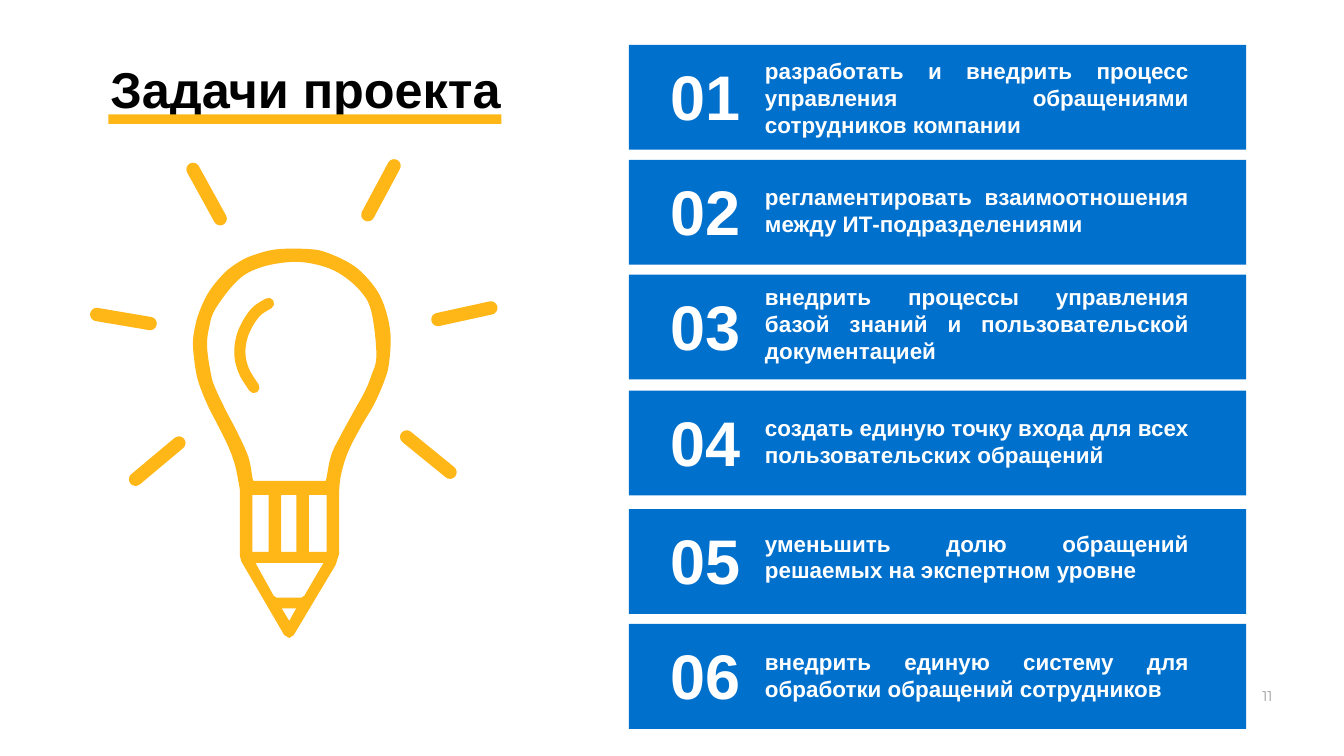
from dataclasses import dataclass

from lxml import etree
from pptx import Presentation
from pptx import util as u
from pptx.dml.color import RGBColor
from pptx.enum import shapes, text
from pptx.oxml.ns import qn

COLUMNS, ROWS = 26.67, 15  # grid of square cells
CELL = u.Inches(1)


@dataclass(frozen=True)
class Theme:
    font: str = "Arial"
    number_font: str = "Montserrat"
    accent: RGBColor = RGBColor(0xFF, 0xB7, 0x18)
    card: RGBColor = RGBColor(0x00, 0x70, 0xCD)
    dark: RGBColor = RGBColor(0, 0, 0)
    light: RGBColor = RGBColor(0xFF, 0xFF, 0xFF)
    muted: RGBColor = RGBColor(0x9B, 0x9A, 0x9C)
    title_size: int = 72
    numeral_size: int = 90
    task_size: int = 32
    page_size: int = 20
    ray_width: int = 19
    glint_width: int = 16


THEME = Theme()

CARD_LEFT, CARD_WIDTH, CARD_HEIGHT = 12.48, 12.25, 2.08
# Card top, offset of the task text inside the card, task
TASKS = [
    (0.89, 0.15, "разработать и внедрить процесс управления обращениями сотрудников компании"),
    (3.17, 0.37, "регламентировать взаимоотношения между ИТ-подразделениями"),
    (5.45, 0.07, "внедрить процессы управления базой знаний и пользовательской документацией"),
    (7.75, 0.36, "создать единую точку входа для всех пользовательских обращений"),
    (10.1, 0.31, "уменьшить долю обращений решаемых на экспертном уровне"),
    (12.38, 0.38, "внедрить единую систему для обработки обращений сотрудников"),
]

GLASS_OUTSIDE = [
    (4.76, 9.71), (4.67, 9.25), (4.54, 8.88), (4.34, 8.47), (4.14, 8.08), (3.98, 7.7),
    (3.89, 7.38), (3.83, 6.85), (3.87, 6.49), (3.97, 6.15), (4.16, 5.77), (4.46, 5.41),
    (4.74, 5.2), (5.01, 5.07), (5.47, 4.95), (6.08, 4.94), (6.48, 5.01), (7.03, 5.28),
    (7.43, 5.69), (7.64, 6.11), (7.75, 6.64), (7.72, 7.21), (7.63, 7.55), (7.43, 8.01),
    (7.19, 8.42), (6.98, 8.81), (6.85, 9.12), (6.76, 9.46), (6.73, 9.74),
]
PENCIL_OUTSIDE = [
    (6.73, 10.99), (6.66, 11.21), (5.83, 12.6), (5.74, 12.66), (5.64, 12.6),
    (4.79, 11.14), (4.76, 11.03),
]
GLASS_INSIDE = [
    (5.03, 9.54), (5.01, 9.48), (4.93, 9.07), (4.71, 8.58), (4.49, 8.16), (4.28, 7.72),
    (4.19, 7.44), (4.11, 6.89), (4.15, 6.5), (4.28, 6.12), (4.72, 5.56), (5.16, 5.31),
    (5.75, 5.2), (6.24, 5.24), (6.71, 5.41), (7.14, 5.76), (7.37, 6.18), (7.47, 7.05),
    (7.37, 7.45), (7.24, 7.77), (7.04, 8.13), (6.74, 8.68), (6.57, 9.04), (6.48, 9.48),
    (6.46, 9.54),
]
SLOTS = [(5.01, 5.33), (5.58, 5.88), (6.13, 6.48)]  # left and right edges
SLOT_TOP, SLOT_BOTTOM = 9.82, 10.95
WOOD = [(5.07, 11.17), (6.42, 11.17), (6.04, 11.82), (5.98, 11.86), (5.49, 11.86), (5.43, 11.82)]
TIP = [(5.59, 12.07), (5.88, 12.07), (5.74, 12.32)]
GLINT = [(5.33, 6.02), (5.06, 6.21), (4.83, 6.6), (4.76, 7), (4.84, 7.36), (5.04, 7.69)]
RAYS = [
    (3.55, 8.79, 2.69, 9.51), (7.82, 3.29, 7.3, 4.26), (3.83, 3.36, 4.37, 4.34),
    (8.07, 8.67, 8.93, 9.37), (9.74, 6.11, 8.69, 6.34), (1.92, 6.24, 2.98, 6.42),
]


def grid(*lengths):
    return [round(length * CELL) for length in lengths]


def smooth(points, steps=6):
    """Return points along a Catmull-Rom curve through the given points."""
    padded = [points[0], *points, points[-1]]
    curve = []
    for a, b, c, d in zip(padded, padded[1:], padded[2:], padded[3:]):
        for step in range(steps):
            t = step / steps
            curve.append(tuple(
                q + t / 2 * (r - p + t * (2 * p - 5 * q + 4 * r - s + t * (3 * (q - r) + s - p)))
                for p, q, r, s in zip(a, b, c, d)))
    return curve + [points[-1]]


def fill_plain(shape, color):
    shape.shadow.inherit = False
    shape.fill.solid()
    shape.fill.fore_color.rgb = color
    shape.line.fill.background()


def stroke_round(shape, width):
    shape.line.color.rgb = THEME.accent
    shape.line.width = u.Pt(width)
    line = shape.line._get_or_add_ln()
    line.set("cap", "rnd")
    etree.SubElement(line, qn("a:round"))


def add_block(slide, box, color):
    block = slide.shapes.add_shape(shapes.MSO_SHAPE.RECTANGLE, *grid(*box))
    fill_plain(block, color)


def write(shape, words, size, color, align, margins, font=THEME.font, bold=True):
    frame = shape.text_frame
    frame.word_wrap = True
    frame.auto_size = text.MSO_AUTO_SIZE.NONE
    frame.vertical_anchor = text.MSO_ANCHOR.TOP
    frame.margin_left = frame.margin_right = u.Inches(margins[0])
    frame.margin_top = frame.margin_bottom = u.Inches(margins[1])
    frame.text = words
    paragraph = frame.paragraphs[0]
    paragraph.alignment = align
    paragraph.font.name = font
    paragraph.font.size = u.Pt(size)
    paragraph.font.bold = bold
    paragraph.font.color.rgb = color
    return paragraph


def add_label(slide, box, *style, **options):
    write(slide.shapes.add_textbox(*grid(*box)), *style, **options)


def add_title(slide, words):
    title = slide.shapes.title
    title.left, title.top, title.width, title.height = grid(2.15, 0.88, 10.47, 1.73)
    paragraph = write(title, words, THEME.title_size, THEME.dark, text.PP_ALIGN.LEFT, (0.04, 0.04))
    paragraph.line_spacing = 1.2
    add_block(slide, (2.15, 2.27, 7.8, 0.19), THEME.accent)


def add_outline(slide, contours, close=True):
    first, *others = [[grid(*point) for point in contour] for contour in contours]
    builder = slide.shapes.build_freeform(*first[0])
    builder.add_line_segments(first[1:], close=close)
    for contour in others:
        builder.move_to(*contour[0])
        builder.add_line_segments(contour[1:], close=close)
    return builder.convert_to_shape()


def add_bulb(slide):
    slots = [[(left, SLOT_TOP), (right, SLOT_TOP), (right, SLOT_BOTTOM), (left, SLOT_BOTTOM)]
             for left, right in SLOTS]
    bulb = add_outline(slide, [smooth(GLASS_OUTSIDE) + PENCIL_OUTSIDE, smooth(GLASS_INSIDE),
                               *slots, WOOD, TIP])
    fill_plain(bulb, THEME.accent)

    for ends in RAYS:
        ray = slide.shapes.add_connector(shapes.MSO_CONNECTOR.STRAIGHT, *grid(*ends))
        stroke_round(ray, THEME.ray_width)
        etree.SubElement(ray._element.spPr, qn("a:effectLst"))

    glint = add_outline(slide, [smooth(GLINT)], close=False)
    glint.shadow.inherit = False
    glint.fill.background()
    stroke_round(glint, THEME.glint_width)


def add_task(slide, number, top, offset, task):
    margins = (0.2, 0.1)
    add_block(slide, (CARD_LEFT, top, CARD_WIDTH, CARD_HEIGHT), THEME.card)
    add_label(slide, (CARD_LEFT + 0.23, top + 0.15, 2.57, 1.72), f"{number:02}",
              THEME.numeral_size, THEME.light, text.PP_ALIGN.CENTER, margins)
    add_label(slide, (CARD_LEFT + 2.5, top + offset, 8.81, CARD_HEIGHT - 2 * offset), task,
              THEME.task_size, THEME.light, text.PP_ALIGN.JUSTIFY, margins)


def main():
    presentation = Presentation()
    presentation.slide_width, presentation.slide_height = grid(COLUMNS, ROWS)
    slide = presentation.slides.add_slide(presentation.slide_layouts.get_by_name("Title Only"))
    add_label(slide, (24.66, 13.61, 0.98, 0.42), "11", THEME.page_size, THEME.muted,
              text.PP_ALIGN.CENTER, (0.04, 0.04), font=THEME.number_font, bold=False)
    add_title(slide, "Задачи проекта")
    add_bulb(slide)
    for number, task in enumerate(TASKS, start=1):
        add_task(slide, number, *task)
    presentation.save("out.pptx")


if __name__ == "__main__":
    main()
